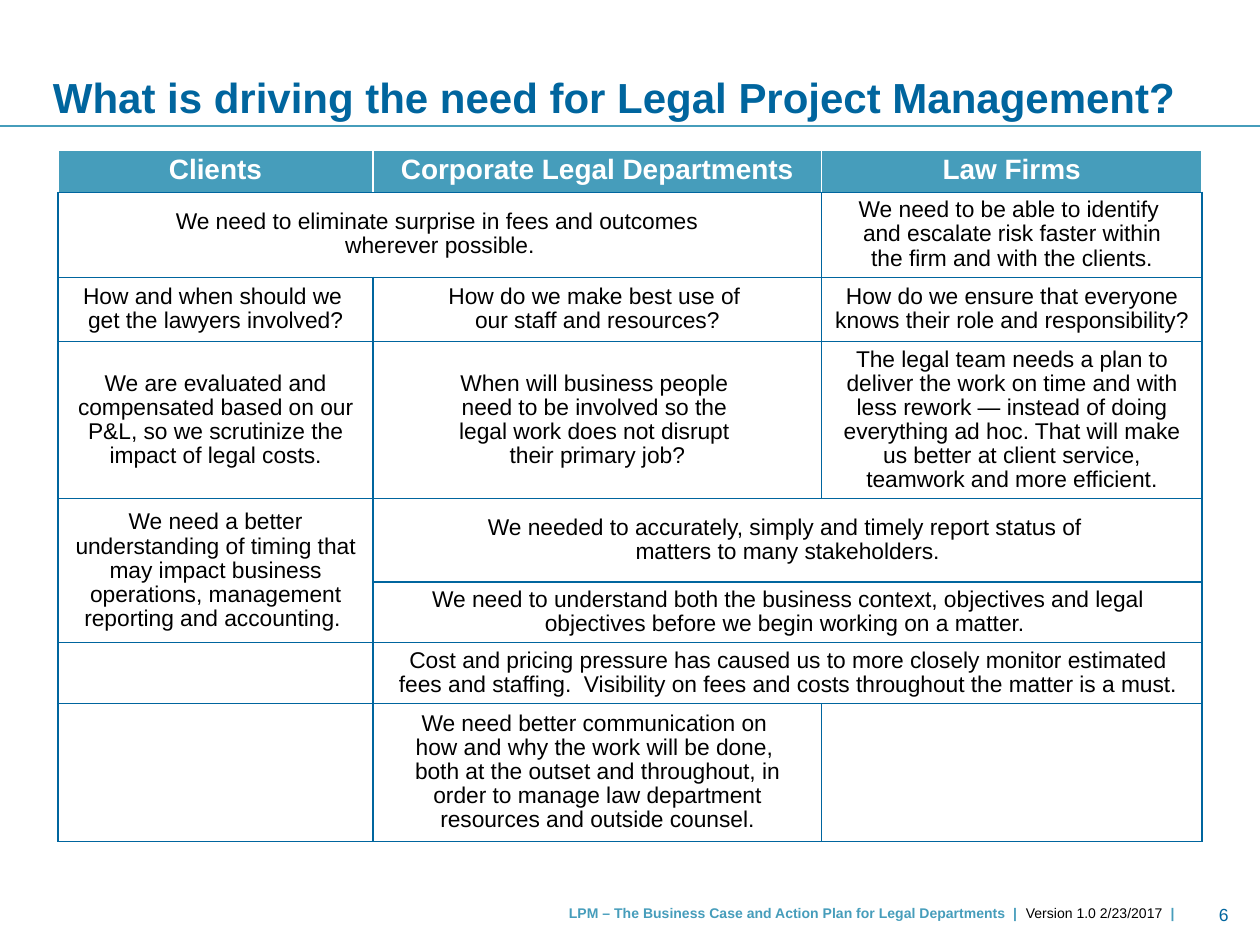
"""Build a slide with a table of the drivers for legal project management."""
from copy import deepcopy

from lxml import etree
from pptx import Presentation
from pptx.dml.color import RGBColor
from pptx.enum.shapes import MSO_CONNECTOR
from pptx.enum.text import MSO_ANCHOR, MSO_AUTO_SIZE, PP_ALIGN
from pptx.oxml.ns import qn
from pptx.util import Inches, Pt

STRAIGHT = MSO_CONNECTOR.STRAIGHT
MIDDLE, BOTTOM, TOP = MSO_ANCHOR.MIDDLE, MSO_ANCHOR.BOTTOM, MSO_ANCHOR.TOP
LEFT, CENTER, RIGHT = PP_ALIGN.LEFT, PP_ALIGN.CENTER, PP_ALIGN.RIGHT
NO_FIT = MSO_AUTO_SIZE.NONE

COLORS = {"blue": "00659E", "teal": "469DBB", "white": "FFFFFF", "black": "000000"}
FONT = "Arial"
WIDTH, HEIGHT = 10, 7.5

TITLE = "What is driving the need for Legal Project Management?"
FOOTER = [
    ("LPM – The Business Case and Action Plan for Legal Departments  |", "teal", True),
    ("  Version 1.0 2/23/2017  ", "black", False),
    ("|", "teal", True),
]
PAGE_NUMBER = "6"

HEADINGS = ["Clients", "Corporate Legal Departments", "Law Firms"]
COLUMN_WIDTHS = [2.5, 3.56, 3.02]
ROW_HEIGHTS = [0.33, 0.67, 0.51, 1.25, 0.66, 0.48, 0.48, 1.09]
ROWS = [
    ["We need to eliminate surprise in fees and outcomes \nwherever possible.",
     None,
     "We need to be able to identify \nand escalate risk faster within\n"
     "the firm and with the clients."],
    ["How and when should we \nget the lawyers involved?",
     "How do we make best use of \nour staff and resources?",
     "How do we ensure that everyone knows their role and responsibility?"],
    ["We are evaluated and compensated based on our P&L, so we scrutinize the "
     "impact of legal costs.",
     "When will business people \nneed to be involved so the \n"
     "legal work does not disrupt \ntheir primary job?",
     "The legal team needs a plan to deliver the work on time and with less rework — "
     "instead of doing everything ad hoc. That will make us better at client service, "
     "teamwork and more efficient."],
    ["We need a better understanding of timing that may impact business operations, "
     "management reporting and accounting. ",
     "We needed to accurately, simply and timely report status of \n"
     "matters to many stakeholders.",
     None],
    [None,
     "We need to understand both the business context, objectives and legal objectives "
     "before we begin working on a matter. ",
     None],
    [None,
     "Cost and pricing pressure has caused us to more closely monitor estimated fees "
     "and staffing.  Visibility on fees and costs throughout the matter is a must.",
     None],
    [None,
     "We need better communication on \nhow and why the work will be done, \n"
     "both at the outset and throughout, in order to manage law department resources "
     "and outside counsel.",
     None],
]
MERGES = [((1, 0), (1, 1)), ((4, 0), (5, 0)), ((4, 1), (4, 2)),
          ((5, 1), (5, 2)), ((6, 1), (6, 2))]


def rgb(name):
    return RGBColor.from_string(COLORS[name])


def add_text(para, text, size, color, bold=False):
    for index, line in enumerate(text.split("\n")):
        if index:
            para.add_line_break()
        span = para.add_run()
        span.text = line
        span.font.name, span.font.size, span.font.bold = FONT, Pt(size), bold
        span.font.color.rgb = rgb(color)
    for line_break in para._p.findall(qn("a:br")):
        line_break.append(deepcopy(para.runs[0]._r.rPr))


def set_frame(frame, anchor, align, margins=None, wrap=True):
    frame.auto_size, frame.word_wrap, frame.vertical_anchor = NO_FIT, wrap, anchor
    if margins is not None:
        frame.margin_left = frame.margin_right = Inches(margins)
        frame.margin_top = frame.margin_bottom = Inches(margins)
    frame.paragraphs[0].alignment = align
    return frame.paragraphs[0]


def set_borders(cell, borders):
    properties = cell._tc.get_or_add_tcPr()
    for index, side in enumerate("LRTB"):
        color, points = borders[side]
        line = etree.Element(qn(f"a:ln{side}"), w=str(Pt(points)))
        fill = etree.SubElement(line, qn("a:solidFill"))
        etree.SubElement(fill, qn("a:srgbClr"), val=COLORS[color])
        properties.insert(index, line)


def add_title(page):
    title = page.shapes.title
    title.left, title.top = Inches(0.42), Inches(0.06)
    title.width, title.height = Inches(WIDTH - 0.42), Inches(0.91)
    para = set_frame(title.text_frame, BOTTOM, LEFT, 0)
    para.line_spacing = 0.9
    add_text(para, TITLE, 24, "blue", True)
    rule = page.shapes.add_connector(STRAIGHT, 0, Inches(1), Inches(WIDTH), Inches(1))
    rule.line.color.rgb, rule.line.width = rgb("teal"), Pt(0.75)
    etree.SubElement(rule._element.spPr, qn("a:effectLst"))


def add_footer(page):
    box = page.shapes.add_textbox(Inches(3.92), Inches(7.13), Inches(5.5), Inches(0.24))
    para = set_frame(box.text_frame, TOP, RIGHT)
    for text, color, bold in FOOTER:
        add_text(para, text, 8, color, bold)
    box = page.shapes.add_textbox(Inches(9.58), Inches(7.17), Inches(0.17), Inches(0.17))
    para = set_frame(box.text_frame, MIDDLE, RIGHT, 0, False)
    add_text(para, PAGE_NUMBER, 10, "blue")


def add_drivers(page):
    content = [HEADINGS] + ROWS
    frame = page.shapes.add_table(
        len(content), len(HEADINGS), Inches(0.46), Inches(1.19),
        Inches(sum(COLUMN_WIDTHS)), Inches(sum(ROW_HEIGHTS)))
    table = frame.table
    table.first_row = table.horz_banding = False
    for column, width in zip(table.columns, COLUMN_WIDTHS):
        column.width = Inches(width)
    for row, height in zip(table.rows, ROW_HEIGHTS):
        row.height = Inches(height)

    body_borders = dict.fromkeys("LRTB", ("blue", 0.75))
    head_borders = {**dict.fromkeys("LRT", ("white", 1)), "B": ("blue", 0.75)}
    for row, texts in enumerate(content):
        head = row == 0
        for column, text in enumerate(texts):
            cell = table.cell(row, column)
            cell.vertical_anchor = MIDDLE
            cell.fill.solid()
            cell.fill.fore_color.rgb = rgb("teal" if head else "white")
            set_borders(cell, head_borders if head else body_borders)
            if head:
                cell.margin_left = cell.margin_right = 0
            if text:
                para = cell.text_frame.paragraphs[0]
                para.alignment, para.line_spacing = CENTER, 0.95
                add_text(para, text, 16 if head else 13,
                         "white" if head else "black", head)
    for first, last in MERGES:
        table.cell(*first).merge(table.cell(*last))


def main():
    deck = Presentation()
    deck.slide_width, deck.slide_height = Inches(WIDTH), Inches(HEIGHT)
    page = deck.slides.add_slide(deck.slide_layouts[5])
    add_title(page)
    add_drivers(page)
    add_footer(page)
    deck.save("out.pptx")


if __name__ == "__main__":
    main()
